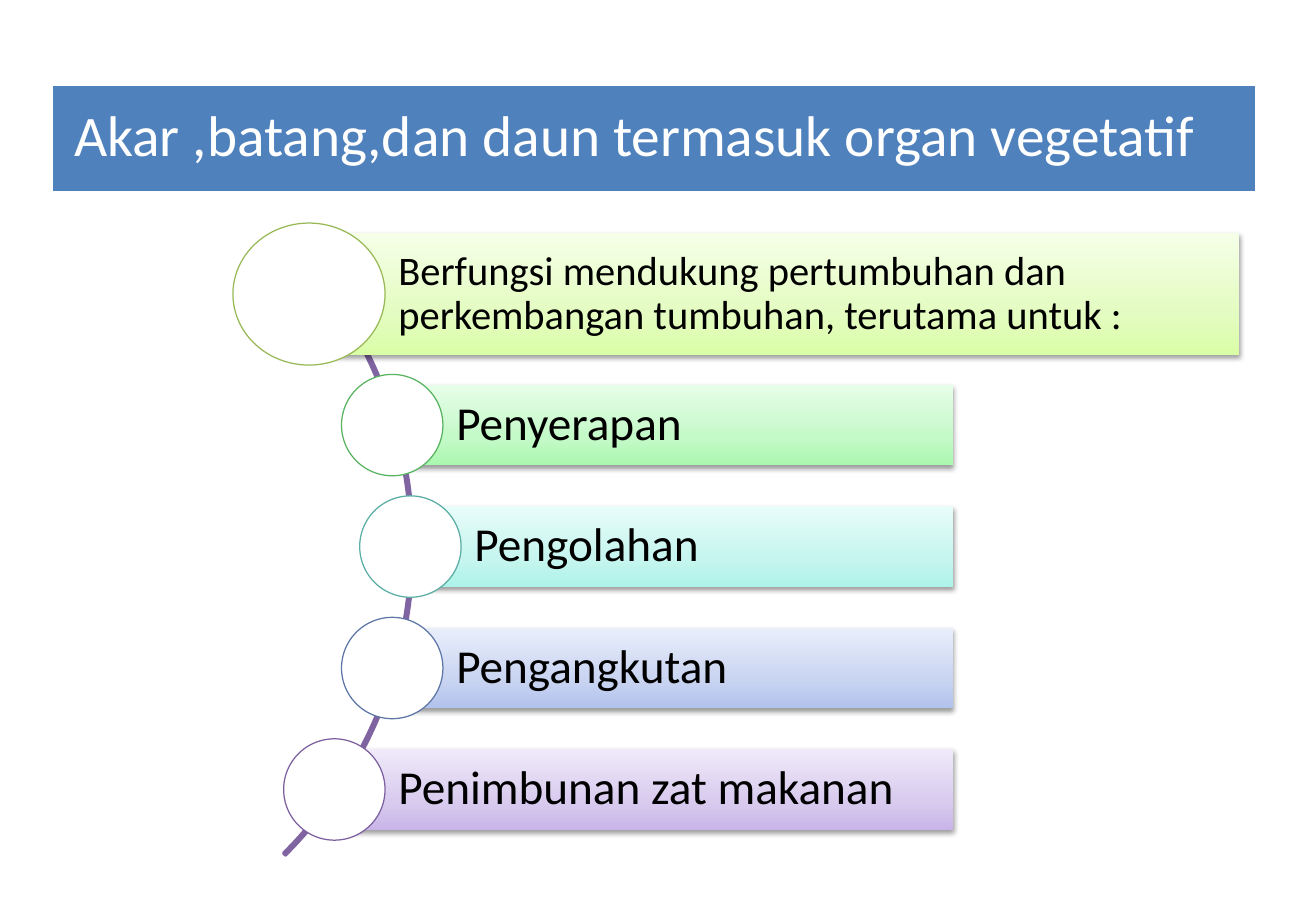
import copy
from dataclasses import dataclass

import lxml.etree
import pptx
import pptx.dml.color
import pptx.enum.shapes
import pptx.enum.text
import pptx.oxml.ns
import pptx.util
from pptx.util import Cm, Pt

SHAPE = pptx.enum.shapes.MSO_SHAPE
qn = pptx.oxml.ns.qn


@dataclass(frozen=True)
class Theme:
    font: str = "Calibri"
    paper: str = "FFFFFF"
    ink: str = "000000"
    title_fill: str = "4F81BD"
    arc: str = "8064A2"
    title_size: int = 34
    intro_size: int = 24
    function_size: int = 28


@dataclass(frozen=True)
class Entry:
    """One bar with its circle; lengths in cm, gradient from bottom to top."""
    text: str
    size: int
    left: float
    right: float
    middle: float
    height: float
    circle_centre: float
    circle_width: float
    circle_height: float
    gradient: tuple[str, str, str]
    outline: str


THEME = Theme()
GRADIENT_POSITIONS = (0, 0.35, 1)
FIRST_FUNCTION_MIDDLE = 8.89
FUNCTION_PITCH = 2.54

INTRO = Entry(
    "Berfungsi mendukung pertumbuhan dan perkembangan tumbuhan, terutama untuk :",
    THEME.intro_size, 6.99, 25.91, 6.15, 2.54, 6.46, 3.18, 2.97,
    ("DAFDA7", "E4FCC2", "F5FFE7"), "98B955")

FUNCTIONS = (
    ("Penyerapan", 8.2, ("ABF8B0", "C4F9C8", "E7FEE9"), "58B361"),
    ("Pengolahan", 8.58, ("AEF3E9", "C6F5EF", "E8FCF9"), "5AADA4"),
    ("Pengangkutan", 8.2, ("B1C2ED", "C9D4F1", "E9EEFB"), "5D76A6"),
    ("Penimbunan zat makanan", 6.99, ("C9B5E8", "D8CBEE", "F0EAF9"), "7D60A0"),
)


def rgb(value: str) -> pptx.dml.color.RGBColor:
    return pptx.dml.color.RGBColor.from_string(value)


def write_text(shape, text: str, size: int, color: str,
               left_inset: float, inset: float) -> None:
    frame = shape.text_frame
    frame.word_wrap = True
    frame.auto_size = pptx.enum.text.MSO_AUTO_SIZE.NONE
    frame.vertical_anchor = pptx.enum.text.MSO_ANCHOR.MIDDLE
    frame.margin_left = Cm(left_inset)
    frame.margin_top = frame.margin_right = frame.margin_bottom = Cm(inset)
    paragraph = frame.paragraphs[0]
    paragraph.alignment = pptx.enum.text.PP_ALIGN.LEFT
    paragraph.line_spacing = 0.9
    run = paragraph.add_run()
    run.text = text
    run.font.name = THEME.font
    run.font.size = Pt(size)
    run.font.color.rgb = rgb(color)


def set_gradient(shape, colors: tuple[str, str, str]) -> None:
    shape.fill.gradient()
    shape.fill.gradient_angle = 90
    stop_list = shape._element.spPr.find(qn("a:gradFill")).find(qn("a:gsLst"))
    stop_list.insert(1, copy.deepcopy(stop_list[0]))
    for stop, color, position in zip(shape.fill.gradient_stops, colors, GRADIENT_POSITIONS):
        stop.color.rgb = rgb(color)
        stop.position = position


def add_soft_shadow(shape) -> None:
    shape.shadow.inherit = False
    effects = shape._element.spPr.find(qn("a:effectLst"))
    shadow = lxml.etree.SubElement(
        effects, qn("a:outerShdw"), blurRad=str(Pt(3.1)), dist=str(Pt(1.6)),
        dir="5400000", rotWithShape="0")
    color = lxml.etree.SubElement(shadow, qn("a:srgbClr"), val=THEME.ink)
    lxml.etree.SubElement(color, qn("a:alpha"), val="38000")


def add_title(slide) -> None:
    title = slide.shapes.title
    title.left, title.top, title.width, title.height = Cm(1.07), Cm(1.76), Cm(25.2), Cm(2.27)
    lxml.etree.SubElement(title._element.spPr, qn("a:prstGeom"), prst="roundRect")
    title.fill.solid()
    title.fill.fore_color.rgb = rgb(THEME.title_fill)
    title.line.color.rgb = rgb(THEME.paper)
    title.line.width = Pt(2)
    write_text(title, "Akar ,batang,dan daun termasuk organ vegetatif",
               THEME.title_size, THEME.paper, 0.48, 0.48)


def add_arc(slide) -> None:
    arc = slide.shapes.add_shape(SHAPE.BLOCK_ARC, Cm(-9.6), Cm(2.31), Cm(18.24), Cm(18.24))
    for index, value in enumerate((189, 27, 0.003)):
        arc.adjustments[index] = value
    arc.shadow.inherit = False
    arc.fill.background()
    arc.line.color.rgb = rgb(THEME.arc)
    arc.line.width = Pt(2)


def add_entry(slide, entry: Entry) -> None:
    bar = slide.shapes.add_shape(
        SHAPE.RECTANGLE, Cm(entry.left), Cm(entry.middle - entry.height / 2),
        Cm(entry.right - entry.left), Cm(entry.height))
    set_gradient(bar, entry.gradient)
    bar.line.fill.background()
    add_soft_shadow(bar)
    write_text(bar, entry.text, entry.size, THEME.ink, 1.34, 0.13)

    circle = slide.shapes.add_shape(
        SHAPE.OVAL, Cm(entry.circle_centre - entry.circle_width / 2),
        Cm(entry.middle - entry.circle_height / 2),
        Cm(entry.circle_width), Cm(entry.circle_height))
    circle.shadow.inherit = False
    circle.fill.solid()
    circle.fill.fore_color.rgb = rgb(THEME.paper)
    circle.line.color.rgb = rgb(entry.outline)
    circle.line.width = Pt(0.75)


def main() -> None:
    deck = pptx.Presentation()
    deck.slide_width, deck.slide_height = Cm(27.51), Cm(19.05)
    slide = deck.slides.add_slide(deck.slide_layouts.get_by_name("Title Only"))
    add_title(slide)
    add_arc(slide)
    add_entry(slide, INTRO)
    for row, (text, left, gradient, outline) in enumerate(FUNCTIONS):
        middle = FIRST_FUNCTION_MIDDLE + row * FUNCTION_PITCH
        add_entry(slide, Entry(text, THEME.function_size, left, 19.92, middle, 1.69,
                               left, 2.12, 2.12, gradient, outline))
    deck.save("out.pptx")


if __name__ == "__main__":
    main()
